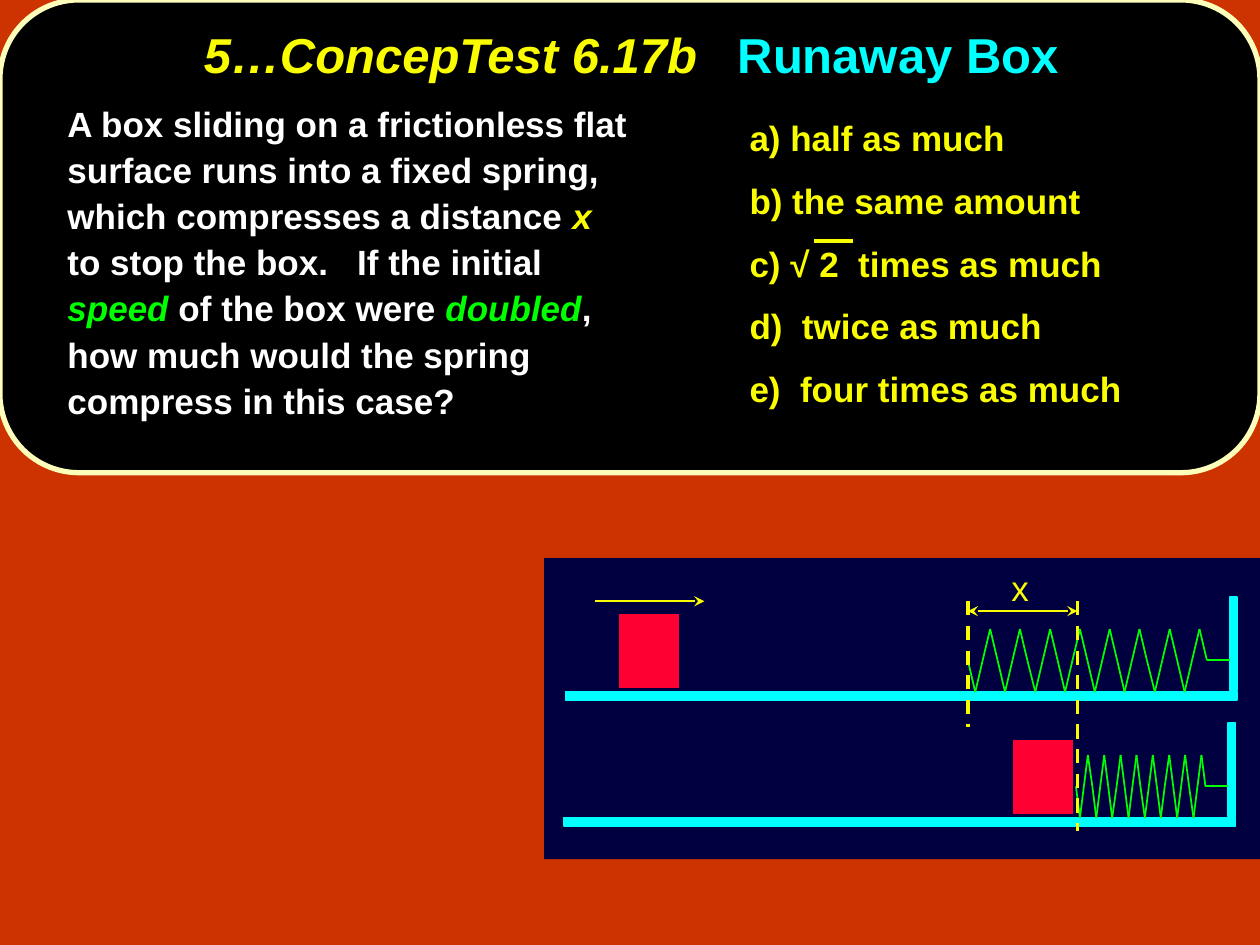
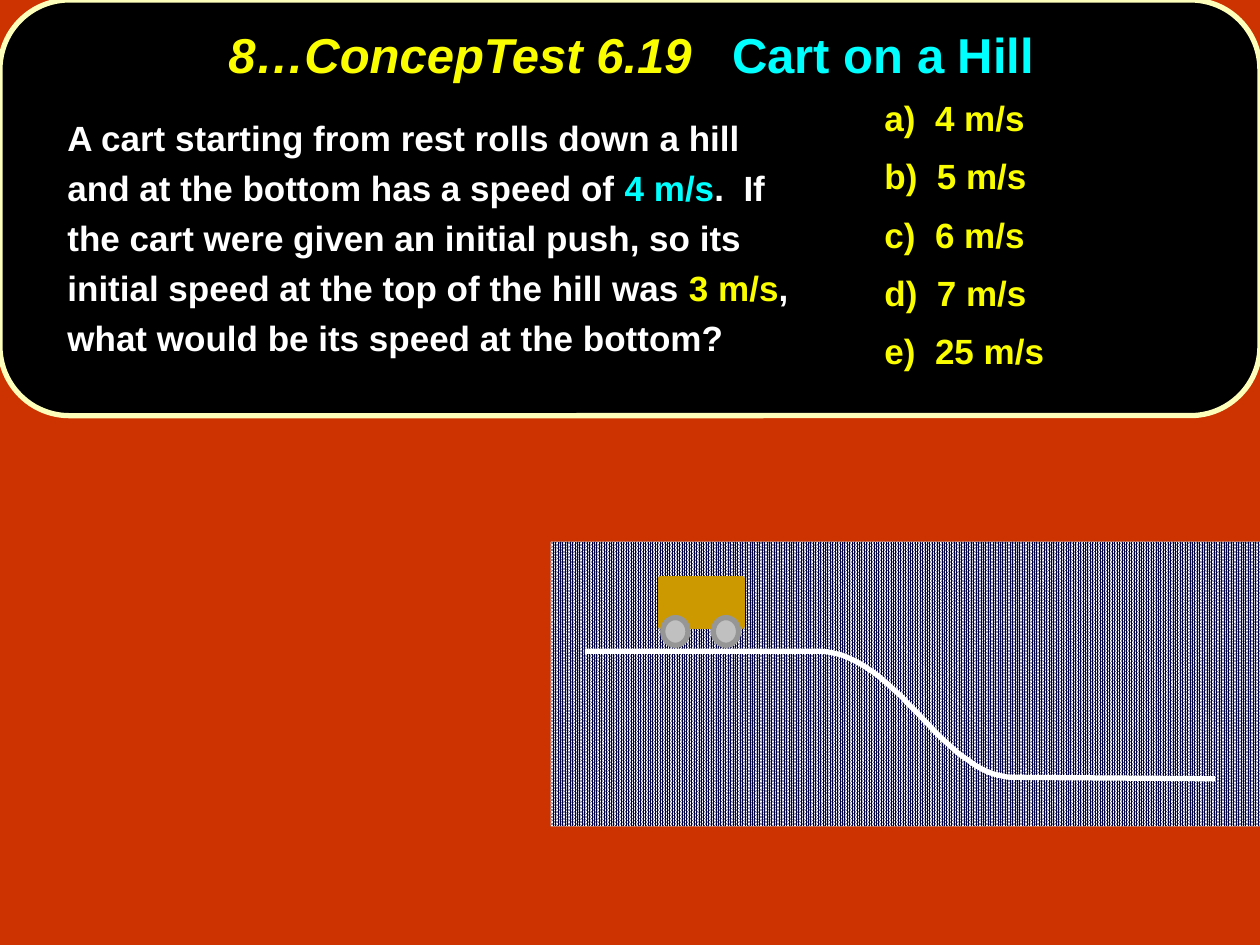
"""Builds two physics quiz slides: a box hitting a spring and a cart on a hill."""
from lxml import etree
from pptx import Presentation
from pptx.dml.color import RGBColor
from pptx.enum.dml import MSO_LINE, MSO_PATTERN
from pptx.enum.shapes import MSO_CONNECTOR, MSO_SHAPE
from pptx.enum.text import MSO_ANCHOR, PP_ALIGN
from pptx.oxml.ns import qn
from pptx.util import Cm, Pt

RECT, ROUND, OVAL = MSO_SHAPE.RECTANGLE, MSO_SHAPE.ROUNDED_RECTANGLE, MSO_SHAPE.OVAL
STRAIGHT, DASH, DOTS = MSO_CONNECTOR.STRAIGHT, MSO_LINE.DASH, MSO_PATTERN.PERCENT_90
CENTER, LEFT = PP_ALIGN.CENTER, PP_ALIGN.LEFT
MIDDLE, TOP = MSO_ANCHOR.MIDDLE, MSO_ANCHOR.TOP

FONT = "Arial"
RUST, BLACK, CREAM, WHITE = "CC3300", "000000", "FCFEB9", "FFFFFF"
YELLOW, CYAN, GREEN, RED = "FAFD00", "00FFFF", "00FF00", "FF0033"
NAVY, GOLD, SILVER, GRAY = "000040", "CC9900", "C0C0C0", "969696"
WIDE, HIGH = 25.4, 19.05
INDENT = 1.11

BOX = {
    "card": 9.53,
    "title": [("5…ConcepTest 6.17b   ", YELLOW, True), ("Runaway Box", CYAN, False)],
    "body": [
        ("A box sliding on a frictionless flat surface runs into a fixed spring, "
         "which compresses a distance ", WHITE, False),
        ("x", YELLOW, True),
        (" to stop the box.   If the initial", WHITE, False),
        (" speed", GREEN, True),
        (" of the box were ", WHITE, False),
        ("doubled", GREEN, True),
        (", how much would the spring compress in this case?", WHITE, False),
    ],
    "body_at": (0, 1.85, 13.03, 7.57),
    "body_gap": 1.1,
    "picks": ["a) half as much", "b) the same amount", "c) √ 2  times as much",
              "d)  twice as much", "e)  four times as much"],
    "picks_at": (14.86, 2.06, 9.96, 6.81),
    "picks_gap": 1.2,
}
CART = {
    "card": 8.38,
    "title": [("8…ConcepTest 6.19   ", YELLOW, True), ("Cart on a Hill", CYAN, False)],
    "body": [
        ("A cart starting from rest rolls down a hill and at the bottom has a speed of ",
         WHITE, False),
        ("4 m/s", CYAN, False),
        (".  If the cart were given an initial push, so its initial speed at the top "
         "of the hill was ", WHITE, False),
        ("3 m/s", YELLOW, False),
        (", what would be its speed at the bottom?", WHITE, False),
    ],
    "body_at": (0, 2.06, 16.38, 5.77),
    "body_gap": 1.19,
    "picks": ["a)  4 m/s", "b)  5 m/s", "c)  6 m/s", "d)  7 m/s", "e)  25 m/s"],
    "picks_at": (17.58, 1.73, 6.63, 5.94),
    "picks_gap": 1.1,
}

# left shift, drop, left end of spring, left of box
SCENES = [(0, 0, 19.51, 12.47), (-0.03, 2.54, 21.69, 20.4)]
DASHES = [(19.51, 14.66), (21.72, 16.76)]
HILL = [(16.54, 13.13), (18.06, 13.18), (19, 15.62), (20.4, 15.67)]
ENDS = (11.79, 13.13), (24.49, 15.7)


def color(code):
    """Turn a hex string into a colour."""
    return RGBColor.from_string(code)


def place(at):
    """Turn centimetres into lengths."""
    return [Cm(round(v, 2)) for v in at]


def stroke(line, code, width):
    """Set the colour and width of a line."""
    line.color.rgb = color(code)
    line.width = Pt(width)


def shape(slide, kind, at, fill, edge=None, width=1):
    """Add a filled preset shape."""
    item = slide.shapes.add_shape(kind, *place(at))
    item.shadow.inherit = False
    item.fill.solid()
    item.fill.fore_color.rgb = color(fill)
    if edge:
        stroke(item.line, edge, width)
    else:
        item.line.fill.background()
    return item


def link(slide, start, end, code, width=1, dash=None, tips=()):
    """Add a straight line, with stealth tips if asked."""
    item = slide.shapes.add_connector(STRAIGHT, *place(start + end))
    stroke(item.line, code, width)
    if dash:
        item.line.dash_style = dash
    props = item._element.spPr
    for tip in tips:
        etree.SubElement(props.find(qn("a:ln")), qn(tip), type="stealth")
    etree.SubElement(props, qn("a:effectLst"))


def text(slide, at, paras, size=20, gap=1.0, bold=True, wrap=True,
         align=LEFT, anchor=TOP, indent=0):
    """Add a text box of paragraphs, each a list of (text, colour, italic)."""
    frame = slide.shapes.add_textbox(*place(at)).text_frame
    frame.word_wrap = wrap
    frame.vertical_anchor = anchor
    for i, runs in enumerate(paras):
        para = frame.add_paragraph() if i else frame.paragraphs[0]
        para.alignment = align
        para.line_spacing = gap
        if i:
            para.space_before = Pt(7)
        if indent:
            para._p.get_or_add_pPr().set("marL", str(Cm(indent)))
        for words, code, slant in runs:
            run = para.add_run()
            run.text = words
            font = run.font
            font.name, font.size = FONT, Pt(size)
            font.bold, font.italic = bold, slant
            font.color.rgb = color(code)


def spring(slide, left, right, mid, count=32, rise=0.635):
    """Draw a zigzag from right to left."""
    step = (right - left) / count
    wave = (0, -rise, 0, rise)
    dots = [(right - i * step, mid + wave[i % 4]) for i in range(count + 1)]
    for start, end in zip(dots, dots[1:]):
        link(slide, start, end, GREEN)


def draw_box(slide):
    """Draw the box and spring before and after the stop."""
    shape(slide, RECT, (10.97, 11.25, 14.43, 6.07), NAVY)
    for shift, drop, left, box in SCENES:
        wall, mid = 24.79 + shift, 13.31 + drop
        shape(slide, RECT, (wall, 12.04 + drop, 0.15, 1.88), CYAN, CYAN)
        shape(slide, RECT, (11.4 + shift, 13.94 + drop, 13.54, 0.18), CYAN, CYAN)
        spring(slide, left, wall - 0.46, mid)
        link(slide, (wall - 0.46, mid), (wall, mid), GREEN)
        shape(slide, RECT, (box, 12.37 + drop, 1.24, 1.52), RED, NAVY)
    link(slide, (11.99, 12.12), (14.2, 12.12), YELLOW, tips=["a:tailEnd"])
    for x, foot in DASHES:
        link(slide, (x, 12.12), (x, foot), YELLOW, 2, DASH)
    text(slide, (20.14, 11.4, 0.86, 1.02), [[("x", YELLOW, False)]],
         gap=0.9, bold=False, wrap=False)
    link(slide, (DASHES[0][0], 12.32), (DASHES[1][0], 12.32), YELLOW,
         tips=["a:headEnd", "a:tailEnd"])


def curve(a, b, c, d, count=32):
    """Sample a cubic curve."""
    for i in range(count + 1):
        t = i / count
        u = 1 - t
        yield tuple(u**3 * p + 3 * u * u * t * q + 3 * u * t * t * r + t**3 * s
                    for p, q, r, s in zip(a, b, c, d))


def draw_cart(slide):
    """Draw the hill and the cart on top of it."""
    panel = shape(slide, RECT, (11.1, 10.92, 14.3, 5.74), NAVY)
    panel.fill.patterned()
    panel.fill.pattern = DOTS
    panel.fill.fore_color.rgb = color(NAVY)
    panel.fill.back_color.rgb = color(WHITE)
    start, end = ENDS
    pen = slide.shapes.build_freeform(*place(start))
    pen.add_line_segments([place(p) for p in [*curve(*HILL), end]], close=False)
    track = pen.convert_to_shape()
    track.shadow.inherit = False
    track.fill.background()
    stroke(track.line, WHITE, 3)
    shape(slide, RECT, (13.31, 11.66, 1.65, 0.97), GOLD, GOLD, 3)
    for x in (13.36, 14.38):
        shape(slide, OVAL, (x, 12.45, 0.51, 0.56), SILVER, GRAY, 3)


def build(deck, quiz, draw):
    """Add one quiz slide."""
    slide = deck.slides.add_slide(deck.slide_layouts[6])
    slide.background.fill.solid()
    slide.background.fill.fore_color.rgb = color(RUST)
    draw(slide)
    card = shape(slide, ROUND, (0, 0, WIDE, quiz["card"]), BLACK, CREAM, 3)
    card.adjustments[0] = 0.167
    text(slide, (2.59, 0, 20.27, 2.34), [quiz["title"]], 28, 0.9,
         align=CENTER, anchor=MIDDLE)
    text(slide, quiz["body_at"], [quiz["body"]], gap=quiz["body_gap"], indent=INDENT)
    text(slide, quiz["picks_at"], [[(pick, YELLOW, False)] for pick in quiz["picks"]],
         gap=quiz["picks_gap"])
    return slide


def main():
    """Build and save the deck."""
    deck = Presentation()
    deck.slide_width, deck.slide_height = place((WIDE, HIGH))
    slide = build(deck, BOX, draw_box)
    link(slide, (16.41, 4.85), (17.2, 4.85), YELLOW, 2.25)
    build(deck, CART, draw_cart)
    deck.save("out.pptx")


if __name__ == "__main__":
    main()
